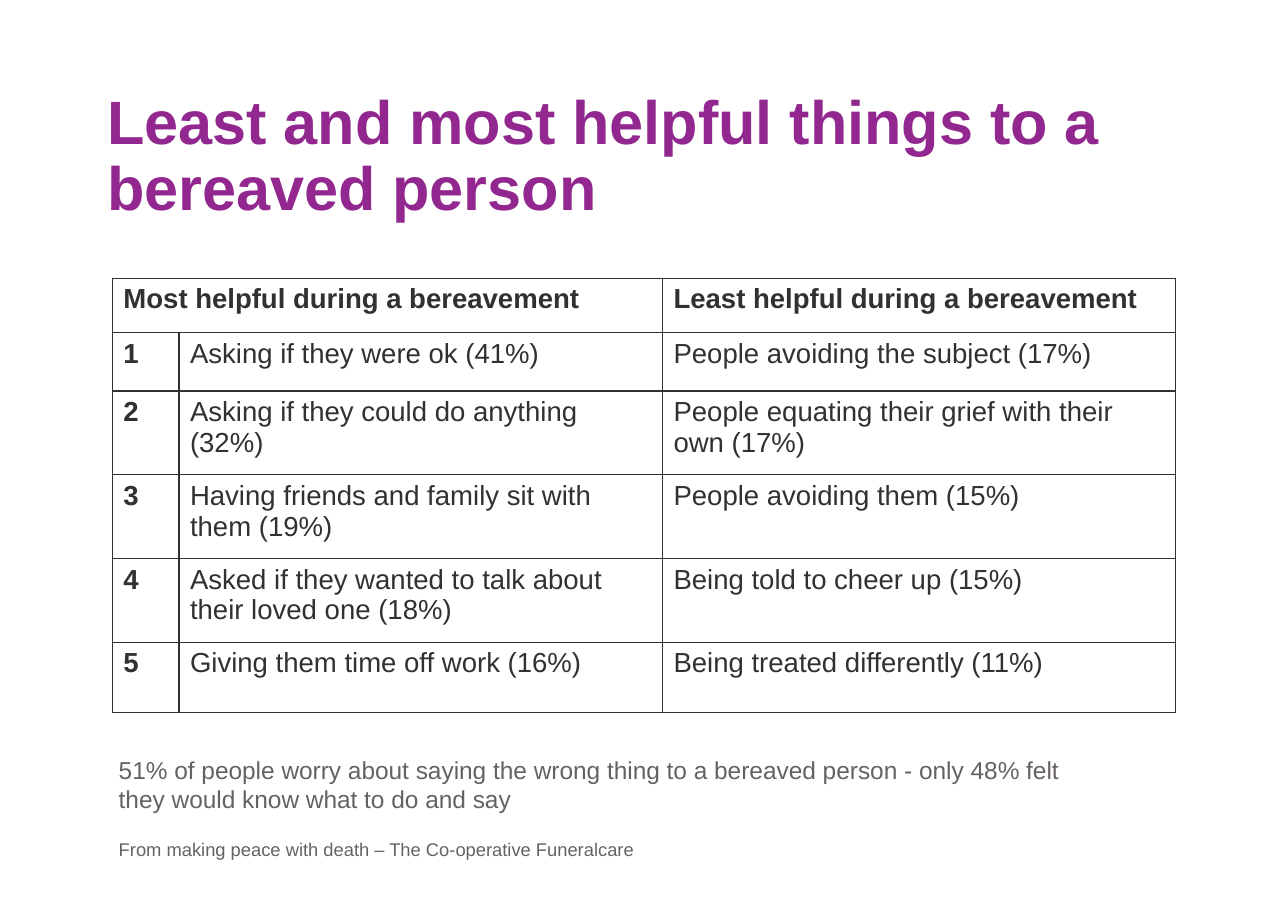
from lxml import etree
from pptx import Presentation
from pptx.dml.color import RGBColor
from pptx.enum import text
from pptx.oxml import ns
from pptx.util import Pt

FONT = "Arial"
PURPLE, INK, GREY = "91278F", "323030", "676262"
HELPFUL = [
    ("Asking if they were ok (41%)", "People avoiding the subject (17%)"),
    ("Asking if they could do anything (32%)",
     "People equating their grief with their own (17%)"),
    ("Having friends and family sit with them (19%)",
     "People avoiding them (15%)"),
    ("Asked if they wanted to talk about their loved one (18%)",
     "Being told to cheer up (15%)"),
    ("Giving them time off work (16%)", "Being treated differently (11%)"),
]
COLUMN_WIDTHS = [43.5, 316, 335]
ROW_HEIGHTS = [35.5, 38, 54.8, 54.8, 54.8, 45.8]


def rgb(value):
    return RGBColor.from_string(value)


def add_run(p, words, size, color, bold=False):
    r = p.add_run()
    r.text = words
    r.font.name = FONT
    r.font.size = Pt(size)
    r.font.bold = bold
    r.font.color.rgb = rgb(color)


def add_title(s, words):
    sp = s.shapes.title
    sp.left, sp.top, sp.width, sp.height = Pt(70), Pt(60), Pt(698), Pt(96)
    tf = sp.text_frame
    tf.margin_left = tf.margin_top = tf.margin_right = tf.margin_bottom = 0
    tf.word_wrap = True
    tf.auto_size = text.MSO_AUTO_SIZE.NONE
    tf.vertical_anchor = text.MSO_ANCHOR.TOP
    p = tf.paragraphs[0]
    p.alignment = text.PP_ALIGN.LEFT
    p.line_spacing = 0.9
    add_run(p, words, 40, PURPLE, True)


def set_borders(cell, color):
    # Borders come before the fill in the cell properties
    tc_pr = cell._tc.get_or_add_tcPr()
    for i, side in enumerate(("lnL", "lnR", "lnT", "lnB")):
        ln = etree.Element(ns.qn(f"a:{side}"), w=str(Pt(1)))
        fill = etree.SubElement(ln, ns.qn("a:solidFill"))
        etree.SubElement(fill, ns.qn("a:srgbClr"), val=color)
        tc_pr.insert(i, ln)


def fill_cell(cell, words, bold):
    add_run(cell.text_frame.paragraphs[0], words, 18, INK, bold)


def add_helpful_table(s):
    frame = s.shapes.add_table(
        len(ROW_HEIGHTS), len(COLUMN_WIDTHS), Pt(73.5), Pt(182),
        Pt(sum(COLUMN_WIDTHS)), Pt(sum(ROW_HEIGHTS)))
    table = frame.table
    table.first_row = table.horz_banding = False
    for column, width in zip(table.columns, COLUMN_WIDTHS):
        column.width = Pt(width)
    for row, height in zip(table.rows, ROW_HEIGHTS):
        row.height = Pt(height)
    for cell in table.iter_cells():
        cell.fill.background()
        set_borders(cell, INK)

    # Header row
    table.cell(0, 0).merge(table.cell(0, 1))
    fill_cell(table.cell(0, 0), "Most helpful during a bereavement", True)
    fill_cell(table.cell(0, 2), "Least helpful during a bereavement", True)

    # Ranked answers
    for rank, (most, least) in enumerate(HELPFUL, 1):
        for col, words in enumerate((str(rank), most, least)):
            fill_cell(table.cell(rank, col), words, col == 0)


def add_notes_box(s, finding, source):
    tf = s.shapes.add_textbox(Pt(70.5), Pt(490), Pt(655), Pt(75)).text_frame
    tf.word_wrap = True
    add_run(tf.paragraphs[0], finding, 16, GREY)
    p = tf.add_paragraph()
    p.space_before = Pt(16)
    add_run(p, source, 12, GREY)


def main():
    prs = Presentation()
    prs.slide_width, prs.slide_height = Pt(841.68), Pt(595.44)
    s = prs.slides.add_slide(prs.slide_layouts[5])
    add_title(s, "Least and most helpful things to a bereaved person")
    add_helpful_table(s)
    add_notes_box(
        s,
        "51% of people worry about saying the wrong thing to a bereaved "
        "person - only 48% felt they would know what to do and say",
        "From making peace with death – The Co-operative Funeralcare")
    prs.save("out.pptx")


if __name__ == "__main__":
    main()
